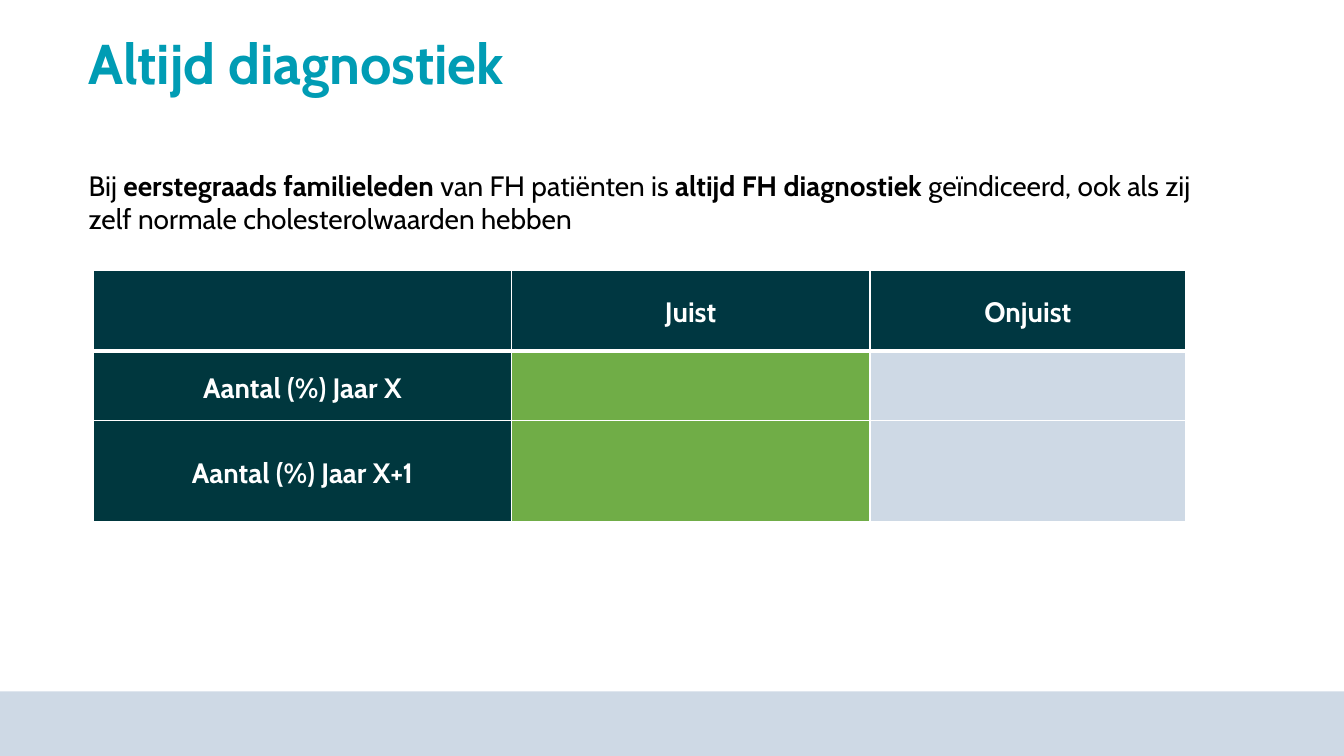
from dataclasses import dataclass

import pptx
import pptx.dml.color
import pptx.enum.shapes
import pptx.enum.text
import pptx.oxml
import pptx.oxml.ns
import pptx.util

Inches = pptx.util.Inches


@dataclass(frozen=True)
class Theme:
    font: str = "Cabin"
    title_size: int = 40
    text_size: int = 20
    title: str = "009CB4"
    text: str = "000000"
    white: str = "FFFFFF"
    header: str = "003741"
    row_label: str = "00373E"
    correct: str = "70AD47"
    pale: str = "CED9E5"


class SlideBuilder:
    def __init__(self, slide, theme):
        self.slide = slide
        self.theme = theme

    def paint(self, fill, color):
        fill.solid()
        fill.fore_color.rgb = pptx.dml.color.RGBColor.from_string(color)

    def style(self, span, size, color, bold):
        span.font.name = self.theme.font
        span.font.size = pptx.util.Pt(size)
        span.font.bold = bold
        span.font.color.rgb = pptx.dml.color.RGBColor.from_string(color)

    def band(self, left, top, width, height, color):
        band = self.slide.shapes.add_shape(
            pptx.enum.shapes.MSO_SHAPE.RECTANGLE,
            Inches(left), Inches(top), Inches(width), Inches(height))
        band.shadow.inherit = False
        self.paint(band.fill, color)
        band.line.fill.background()

    def text(self, left, top, width, height, spans, size, color, spacing=1.0):
        """Add one paragraph made of (wording, bold) spans."""
        box = self.slide.shapes.add_textbox(
            Inches(left), Inches(top), Inches(width), Inches(height))
        box.text_frame.word_wrap = True
        para = box.text_frame.paragraphs[0]
        para.line_spacing = spacing
        for wording, bold in spans:
            span = para.add_run()
            span.text = wording
            self.style(span, size, color, bold)

    def borders(self, cell, widths):
        """Draw white borders; widths maps each side to points."""
        properties = cell._tc.get_or_add_tcPr()
        for side, width in widths.items():
            properties.append(pptx.oxml.parse_xml(
                f'<a:ln{side} {pptx.oxml.ns.nsdecls("a")} w="{pptx.util.Pt(width)}">'
                f'<a:solidFill><a:srgbClr val="{self.theme.white}"/></a:solidFill>'
                f'</a:ln{side}>'))

    def cell(self, cell, wording, color, widths):
        self.borders(cell, widths)
        self.paint(cell.fill, color)
        cell.vertical_anchor = pptx.enum.text.MSO_ANCHOR.MIDDLE
        cell.margin_left = cell.margin_right = Inches(0.07)
        cell.margin_top = cell.margin_bottom = 0
        if wording:
            cell.text_frame.text = wording
            para = cell.text_frame.paragraphs[0]
            para.alignment = pptx.enum.text.PP_ALIGN.CENTER
            para.line_spacing = 1.15
            self.style(para.runs[0], self.theme.text_size, self.theme.white, True)

    def table(self, left, top, widths, heights, wordings, fills):
        table = self.slide.shapes.add_table(
            len(heights), len(widths), Inches(left), Inches(top),
            Inches(sum(widths)), Inches(sum(heights))).table
        for column, width in zip(table.columns, widths):
            column.width = Inches(width)
        for index, (row, height) in enumerate(zip(table.rows, heights)):
            row.height = Inches(height)
            # The rule below the header row is thicker
            sides = {"L": 1, "R": 1, "T": 3 if index == 1 else 1,
                     "B": 3 if index == 0 else 1}
            for cell, wording, color in zip(row.cells, wordings[index], fills[index]):
                self.cell(cell, wording, color, sides)


def main():
    theme = Theme()
    deck = pptx.Presentation()
    deck.slide_width, deck.slide_height = Inches(13.33), Inches(7.5)
    page = SlideBuilder(deck.slides.add_slide(deck.slide_layouts[6]), theme)

    # Footer band
    page.band(0, 6.86, 13.33, 0.64, theme.pale)

    # Title and statement
    page.text(0.78, 0.31, 10.68, 0.71, [("Altijd diagnostiek", True)],
              theme.title_size, theme.title, spacing=0.9)
    statement = [
        ("Bij ", False),
        ("eerstegraads familieleden ", True),
        ("van FH patiënten is ", False),
        ("altijd FH diagnostiek ", True),
        ("geïndiceerd, ook als zij zelf normale cholesterolwaarden hebben", False),
    ]
    page.text(0.78, 1.62, 11.22, 2.12, statement, theme.text_size, theme.text)

    # Answer table
    wordings = [("", "Juist", "Onjuist"),
                ("Aantal (%) Jaar X", "", ""),
                ("Aantal (%) Jaar X+1", "", "")]
    answer_fills = (theme.row_label, theme.correct, theme.pale)
    page.table(0.93, 2.68, (4.14, 3.56, 3.13), (0.8, 0.69, 1), wordings,
               [(theme.header,) * 3, answer_fills, answer_fills])

    deck.save("out.pptx")


if __name__ == "__main__":
    main()
